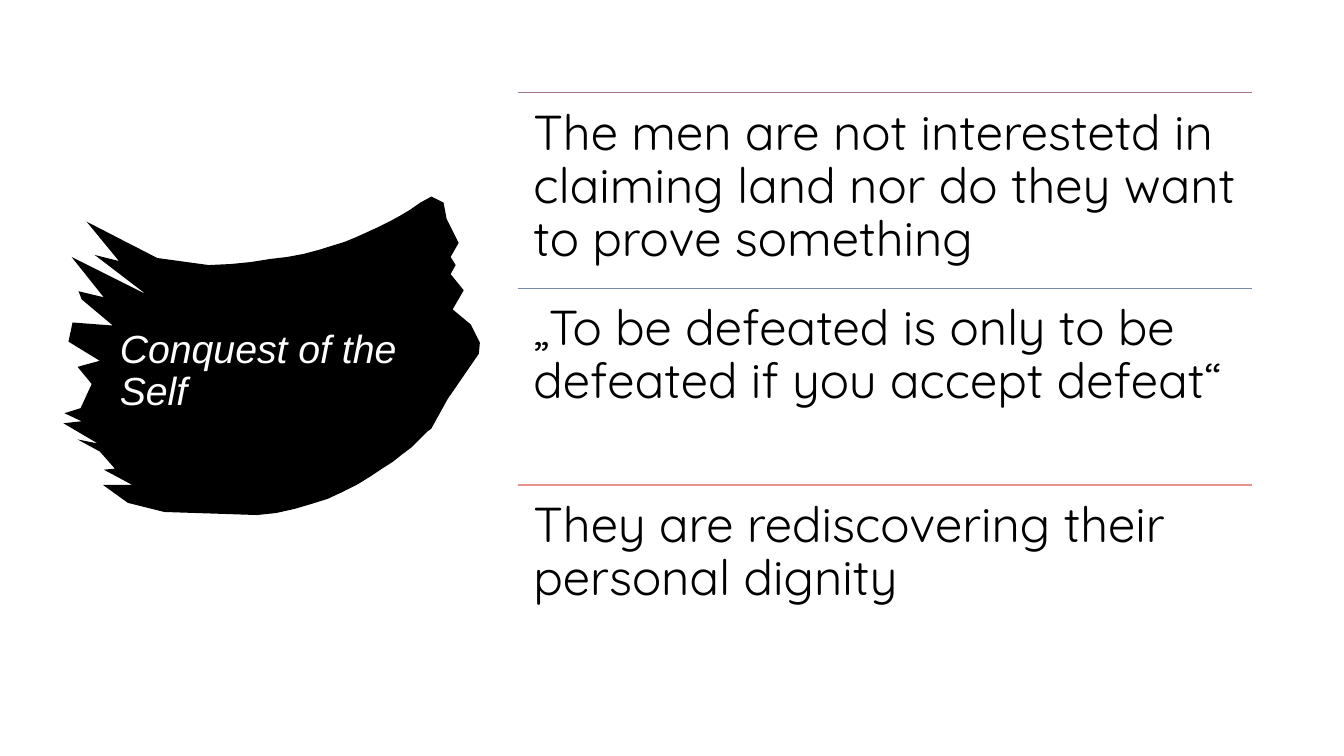
from lxml import etree
from pptx import Presentation
from pptx import util as u
from pptx.dml.color import RGBColor
from pptx.enum import shapes, text
from pptx.oxml.ns import qn

PX = 9144  # EMU per px, 100 px to the inch
COLORS = {"paper": "FFFFFF", "ink": "000000",
          "plum": "A6778D", "slate": "768BA6", "coral": "E8908B"}

STATEMENTS = [
    ("The men are not interestetd in claiming land nor do they want "
     "to prove something", "plum"),
    ("„To be defeated is only to be defeated if you accept defeat“", "slate"),
    ("They are rediscovering their personal dignity", "coral"),
]
LEFT, WIDTH = 514, 728
FIRST_RULE, LAST_RULE = 92, 481

# Brush stroke: smooth edges as cubic curves, ragged ends as corners
LOWER_EDGE = [(428, 425), (427, 425), (357, 504), (255, 511)]
UPPER_EDGE = [(207, 263), (330, 257), (370, 230), (428, 195)]
RIGHT_END = [(440, 201), (443, 217), (455, 241), (447, 255), (452, 263),
             (447, 272), (460, 288), (449, 307), (467, 322), (476, 340),
             (475, 351), (444, 396)]
LEFT_END = [(163, 508), (127, 499), (102, 481), (131, 481), (103, 466),
            (114, 465), (99, 448), (77, 436), (97, 440), (63, 420),
            (81, 418), (64, 410), (80, 405), (91, 381), (77, 364),
            (99, 358), (68, 339), (72, 320), (112, 323), (81, 297),
            (78, 289), (103, 295), (71, 255), (145, 292), (94, 253),
            (118, 259), (86, 220), (156, 256)]


def color(name):
    return RGBColor.from_string(COLORS[name])


def curve(a, b, c, d, steps=16):
    """Points along a cubic curve from a to d."""
    points = []
    for i in range(steps + 1):
        t = i / steps
        weights = ((1 - t) ** 3, 3 * t * (1 - t) ** 2, 3 * t * t * (1 - t), t ** 3)
        points.append(tuple(sum(w * v for w, v in zip(weights, axis))
                            for axis in zip(a, b, c, d)))
    return points


def add_brush(s):
    outline = curve(*UPPER_EDGE) + RIGHT_END + curve(*LOWER_EDGE) + LEFT_END
    fb = s.shapes.build_freeform(*outline[0], scale=float(PX))
    fb.add_line_segments(outline[1:], close=True)
    sp = fb.convert_to_shape()
    sp.shadow.inherit = False
    sp.fill.solid()
    sp.fill.fore_color.rgb = color("ink")
    sp.line.fill.background()


def add_text(s, box, words, font, size, ink, inset, anchor, italic=False):
    sp = s.shapes.add_textbox(*(v * PX for v in box))
    tf = sp.text_frame
    tf.word_wrap = True
    tf.vertical_anchor = anchor
    tf.margin_left = tf.margin_right = inset[0] * PX
    tf.margin_top = tf.margin_bottom = inset[1] * PX
    p = tf.paragraphs[0]
    p.line_spacing = 0.9
    r = p.add_run()
    r.text = words
    r.font.name = font
    r.font.size = u.Pt(size)
    r.font.italic = italic
    r.font.color.rgb = color(ink)


def add_rule(s, x, y, width, ink):
    line = s.shapes.add_connector(
        shapes.MSO_CONNECTOR.STRAIGHT, x * PX, y * PX, (x + width) * PX, y * PX)
    line.line.color.rgb = color(ink)
    line.line.width = u.Pt(1)
    etree.SubElement(line._element.spPr, qn("a:effectLst"))


def main():
    prs = Presentation()
    prs.slide_width, prs.slide_height = 1333 * PX, 750 * PX
    s = prs.slides.add_slide(prs.slide_layouts[6])
    s.background.fill.solid()
    s.background.fill.fore_color.rgb = color("paper")

    # Title on a brush stroke
    add_brush(s)
    add_text(s, (109, 287, 329, 164), "Conquest of the Self", "Arial", 28,
             "paper", (10, 5), text.MSO_ANCHOR.MIDDLE, italic=True)

    # Statements, each under its own rule
    pitch = (LAST_RULE - FIRST_RULE) / (len(STATEMENTS) - 1)
    for i, (words, ink) in enumerate(STATEMENTS):
        y = int(FIRST_RULE + i * pitch)
        add_rule(s, LEFT, y, WIDTH, ink)
        add_text(s, (LEFT, y, WIDTH, int(pitch)), words, "Quicksand", 35,
                 "ink", (15, 15), text.MSO_ANCHOR.TOP)

    prs.save("out.pptx")


if __name__ == "__main__":
    main()
